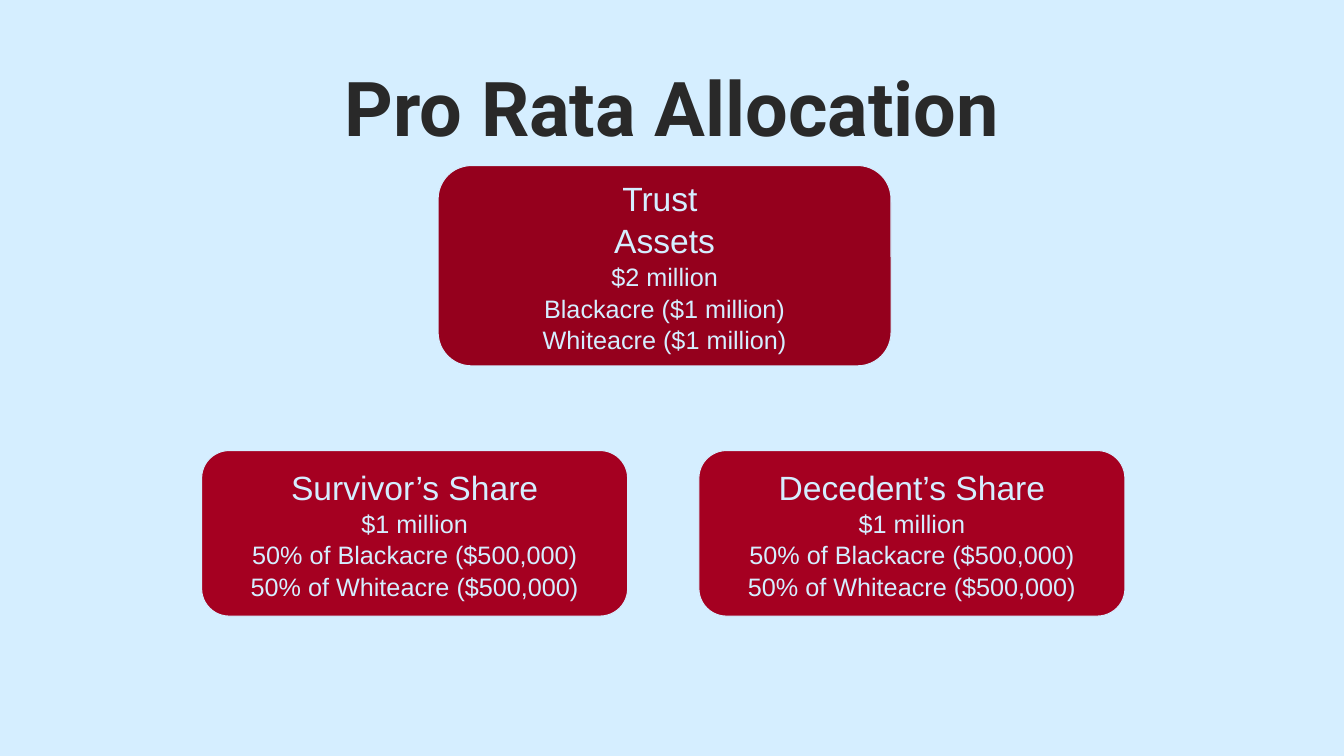
from dataclasses import dataclass

from pptx import Presentation
from pptx.dml.color import RGBColor
from pptx.enum.shapes import MSO_SHAPE
from pptx.enum.text import MSO_ANCHOR, PP_ALIGN
from pptx.slide import Slide
from pptx.text.text import _Paragraph as Paragraph
from pptx.util import Inches, Pt

SLIDE_WIDTH, SLIDE_HEIGHT = Inches(13.33), Inches(7.5)
SKY, CRIMSON, DARK_CRIMSON, INK = "D5EEFF", "A50021", "95001D", "292929"
SHARE_LEFT, SHARE_STEP = 0.15, 0.37


@dataclass
class Card:
    """A rounded box; lengths are shares of the slide's width and height."""
    left: float
    top: float
    width: float
    height: float
    fill: str
    heading: list[str]
    details: list[str]


def share_card(column: int, owner: str) -> Card:
    return Card(SHARE_LEFT + column * SHARE_STEP, 0.596, 0.317, 0.219, CRIMSON,
                [f"{owner}’s Share"],
                ["$1 million", "50% of Blackacre ($500,000)", "50% of Whiteacre ($500,000)"])


CARDS = [
    Card(0.326, 0.219, 0.337, 0.265, DARK_CRIMSON, ["Trust ", "Assets"],
         ["$2 million", "Blackacre ($1 million)", "Whiteacre ($1 million)"]),
    share_card(0, "Survivor"),
    share_card(1, "Decedent"),
]


def color(code: str) -> RGBColor:
    return RGBColor.from_string(code)


def style(para: Paragraph, font: str, size: int, code: str) -> None:
    para.alignment = PP_ALIGN.CENTER
    para.font.name = font
    para.font.size = Pt(size)
    para.font.color.rgb = color(code)


def add_title(page: Slide, text: str) -> None:
    box = page.shapes.add_textbox(
        int(SLIDE_WIDTH * 0.05), int(SLIDE_HEIGHT * 0.04),
        int(SLIDE_WIDTH * 0.9), int(SLIDE_HEIGHT * 0.167))
    frame = box.text_frame
    frame.word_wrap = True
    frame.vertical_anchor = MSO_ANCHOR.BOTTOM
    para = frame.paragraphs[0]
    para.text = text
    style(para, "Roboto", 54, INK)
    para.font.bold = True


def add_card(page: Slide, card: Card) -> None:
    box = page.shapes.add_shape(
        MSO_SHAPE.ROUNDED_RECTANGLE,
        int(SLIDE_WIDTH * card.left), int(SLIDE_HEIGHT * card.top),
        int(SLIDE_WIDTH * card.width), int(SLIDE_HEIGHT * card.height))
    box.shadow.inherit = False
    box.fill.solid()
    box.fill.fore_color.rgb = color(card.fill)
    box.line.color.rgb = color(SKY)
    box.line.width = Pt(0.75)
    frame = box.text_frame
    frame.word_wrap = False
    frame.vertical_anchor = MSO_ANCHOR.MIDDLE
    frame.text = "\n".join(card.heading + card.details)
    for index, para in enumerate(frame.paragraphs):
        style(para, "Arial", 24 if index < len(card.heading) else 18, SKY)
        para.line_spacing = 1.04


def main() -> None:
    deck = Presentation()
    deck.slide_width, deck.slide_height = SLIDE_WIDTH, SLIDE_HEIGHT
    page = deck.slides.add_slide(deck.slide_layouts[6])
    page.background.fill.solid()
    page.background.fill.fore_color.rgb = color(SKY)
    add_title(page, "Pro Rata Allocation")
    for card in CARDS:
        add_card(page, card)
    deck.save("out.pptx")


if __name__ == "__main__":
    main()
